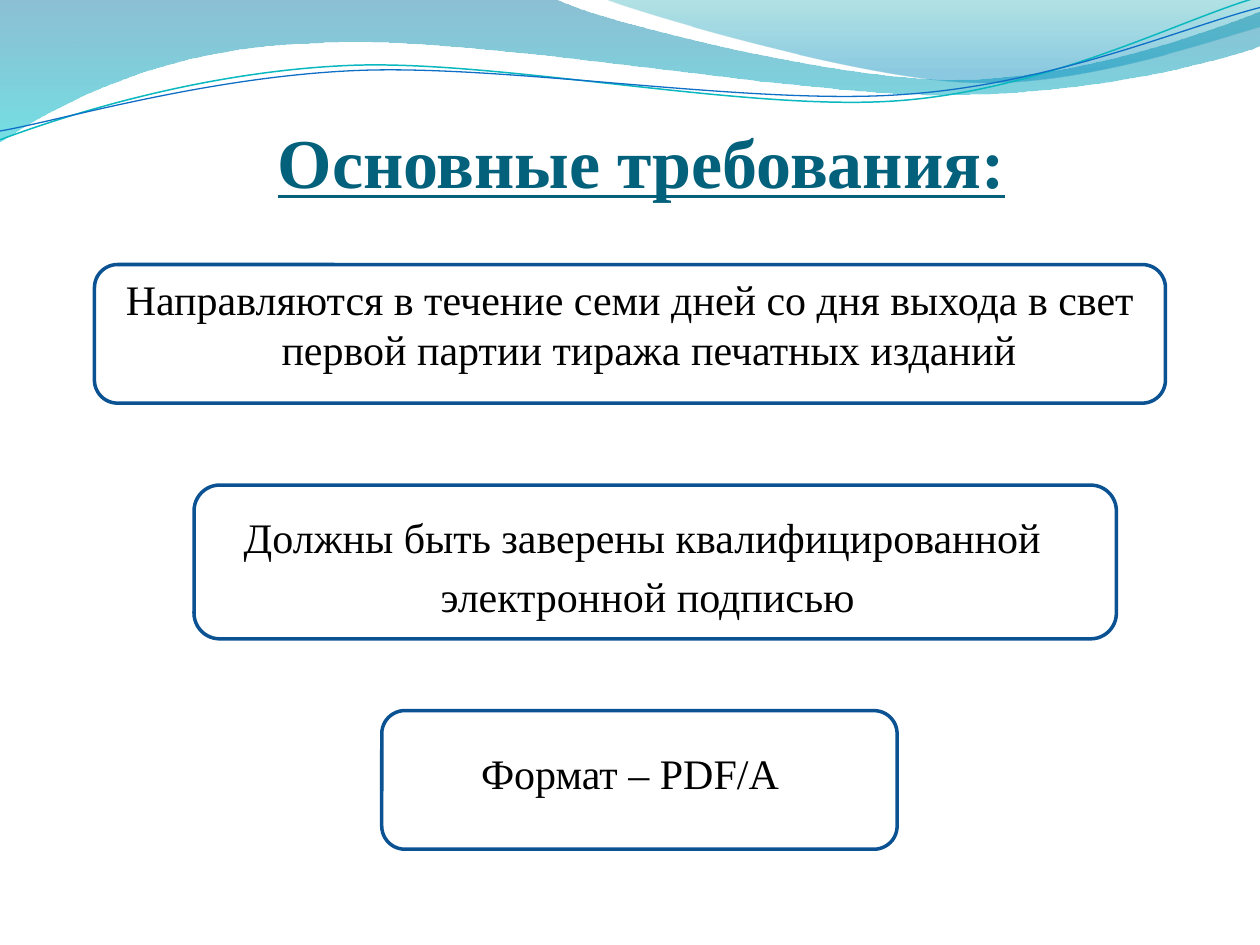
"""Build a slide listing the main requirements under a wave decoration."""
from dataclasses import dataclass

import pptx
import pptx.enum.shapes
import pptx.enum.text
import pptx.oxml.ns
import pptx.shapes.autoshape
import pptx.slide
import pptx.text.text
from lxml import etree
from pptx.dml.color import RGBColor
from pptx.util import Inches, Pt

FONT = "Times New Roman"
TITLE_COLOR = RGBColor(0x04, 0x61, 0x7B)
TEXT_COLOR = RGBColor(0x00, 0x00, 0x00)
FRAME_COLOR = RGBColor(0x0B, 0x52, 0x92)
TEAL_LINE = RGBColor(0x0A, 0xB8, 0xBF)
BLUE_LINE = RGBColor(0x0F, 0x6F, 0xC6)
DEEP_BLUE = RGBColor(0x00, 0x74, 0xA1)
TURQUOISE = RGBColor(0x00, 0xC6, 0xCF)
DARK_TEAL = RGBColor(0x00, 0xA1, 0xA9)
SKY_BLUE = RGBColor(0x00, 0x8B, 0xBF)

Point = tuple[float, float]
Box = tuple[float, float, float, float]


@dataclass(frozen=True)
class GradientStop:
    position: float
    color: RGBColor
    opacity: int


@dataclass(frozen=True)
class Wave:
    start: Point
    segments: list[tuple[Point, ...]]
    stops: tuple[GradientStop, ...] = ()
    line_color: RGBColor | None = None
    line_width: float = 0


@dataclass(frozen=True)
class Requirement:
    frame: Box
    text_box: Box
    lines: tuple[str, ...]
    hanging: float = 0
    margin_top: float = 0.05


WAVES = [
    Wave((0, 0), [
        ((4.4, -0.01),),
        ((4.76, 0.17), (6.64, 0.63), (7.58, 0.63)),
        ((8.53, 0.63), (9.58, 0.26), (10, 0.09)),
        ((10.01, 0.36),),
        ((9.83, 0.44), (8.7, 0.76), (7.46, 0.75)),
        ((6.22, 0.75), (3.82, 0.28), (2.57, 0.34)),
        ((1.29, 0.36), (0.46, 0.83), (-0.01, 1.13)),
    ], stops=(GradientStop(0, DEEP_BLUE, 45), GradientStop(1, TURQUOISE, 55))),
    Wave((4.79, -0.01), [
        ((5.09, 0.11), (6.82, 0.62), (7.69, 0.65)),
        ((8.56, 0.69), (9.61, 0.32), (10, 0.21)),
        ((10, 0),),
    ], stops=(GradientStop(0, DARK_TEAL, 30), GradientStop(0.8, SKY_BLUE, 45))),
    Wave((0, 1.11), [
        ((0.48, 0.93), (1.58, 0.57), (2.77, 0.52)),
        ((3.95, 0.47), (5.93, 0.89), (7.13, 0.8)),
        ((8.33, 0.71), (9.38, 0.15), (9.98, -0.02)),
    ], line_color=TEAL_LINE, line_width=0.85),
    Wave((0, 1.04), [
        ((0.47, 0.96), (1.64, 0.61), (2.83, 0.56)),
        ((4.03, 0.51), (5.97, 0.84), (7.17, 0.75)),
        ((8.36, 0.67), (9.41, 0.21), (10, 0.06)),
    ], line_color=BLUE_LINE, line_width=0.75),
]

REQUIREMENTS = [
    Requirement(
        (0.75, 2.1, 8.5, 1.1), (0.5, 2.12, 9, 4.8),
        ("Направляются в течение семи дней со дня выхода в свет "
         "первой партии тиража печатных изданий",), hanging=0.3),
    Requirement(
        (1.54, 3.85, 7.32, 1.22), (0.89, 3.53, 8.5, 1.53),
        ("Должны быть заверены квалифицированной ", "электронной подписью"),
        margin_top=0.53),
    Requirement(
        (3.03, 5.64, 4.09, 1.1), (2.4, 5.88, 5.2, 1.05),
        ("Формат – PDF/A",), hanging=0.3),
]


def bend_segments(shape: pptx.shapes.autoshape.Shape, wave: Wave) -> None:
    """Join each triple of line points into one cubic curve."""
    lines = shape.element.spPr.iter(pptx.oxml.ns.qn("a:lnTo"))
    remaining = iter(list(lines))
    for segment in wave.segments:
        first, *others = [next(remaining) for _ in segment]
        if not others:
            continue
        curve = etree.Element(pptx.oxml.ns.qn("a:cubicBezTo"))
        first.addprevious(curve)
        for line in (first, *others):
            curve.append(line[0])
            line.getparent().remove(line)


def draw_wave(slide: pptx.slide.Slide, wave: Wave) -> None:
    """Draw a gradient wave or an open wavy line."""
    points = [wave.start, *(point for segment in wave.segments for point in segment)]
    vertices = [(Inches(x), Inches(y)) for x, y in points]
    builder = slide.shapes.build_freeform(*vertices[0])
    builder.add_line_segments(vertices[1:], close=bool(wave.stops))
    shape = builder.convert_to_shape()
    bend_segments(shape, wave)
    shape.shadow.inherit = False
    if not wave.stops:
        shape.fill.background()
        shape.line.color.rgb = wave.line_color
        shape.line.width = Pt(wave.line_width)
        return
    shape.line.fill.background()
    shape.fill.gradient()
    shape.fill.gradient_angle = 270
    for stop, gradient_stop in zip(wave.stops, shape.fill.gradient_stops):
        gradient_stop.position = stop.position
        gradient_stop.color.rgb = stop.color
    colors = shape.element.spPr.iter(pptx.oxml.ns.qn("a:srgbClr"))
    for stop, color in zip(wave.stops, colors):
        alpha = etree.SubElement(color, pptx.oxml.ns.qn("a:alpha"))
        alpha.set("val", str(stop.opacity * 1000))


def add_run(paragraph: pptx.text.text._Paragraph, text: str, size: float,
            color: RGBColor) -> pptx.text.text._Run:
    """Add a formatted run to a centred paragraph."""
    paragraph.alignment = pptx.enum.text.PP_ALIGN.CENTER
    run = paragraph.add_run()
    run.text = text
    run.font.name = FONT
    run.font.size = Pt(size)
    run.font.color.rgb = color
    return run


def draw_title(slide: pptx.slide.Slide, text: str) -> None:
    """Place and format the slide title."""
    title = slide.shapes.title
    title.left, title.top, title.width, title.height = map(Inches, (0.59, 0.36, 9, 1.25))
    frame = title.text_frame
    frame.vertical_anchor = pptx.enum.text.MSO_ANCHOR.BOTTOM
    frame.margin_left = frame.margin_right = frame.margin_bottom = 0
    run = add_run(frame.paragraphs[0], text, 40, TITLE_COLOR)
    run.font.bold = True
    run.font.underline = True


def draw_requirement(slide: pptx.slide.Slide, requirement: Requirement) -> None:
    """Draw a rounded frame and its text."""
    shape = slide.shapes.add_shape(
        pptx.enum.shapes.MSO_SHAPE.ROUNDED_RECTANGLE, *map(Inches, requirement.frame))
    shape.shadow.inherit = False
    shape.fill.background()
    shape.line.color.rgb = FRAME_COLOR
    shape.line.width = Pt(2)
    frame = slide.shapes.add_textbox(*map(Inches, requirement.text_box)).text_frame
    frame.word_wrap = True
    frame.margin_top = Inches(requirement.margin_top)
    for index, line in enumerate(requirement.lines):
        paragraph = frame.add_paragraph() if index else frame.paragraphs[0]
        paragraph.space_before = Pt(4.8 if index else 0)
        if requirement.hanging:
            properties = paragraph._p.get_or_add_pPr()
            properties.set("marL", str(Inches(requirement.hanging)))
            properties.set("indent", str(-Inches(requirement.hanging)))
        add_run(paragraph, line, 24, TEXT_COLOR)


def main() -> None:
    """Build and save the presentation."""
    presentation = pptx.Presentation()
    presentation.slide_width, presentation.slide_height = Inches(10), Inches(7.5)
    slide = presentation.slides.add_slide(presentation.slide_layouts[5])
    for wave in WAVES:
        draw_wave(slide, wave)
    draw_title(slide, "Основные требования:")
    for requirement in REQUIREMENTS:
        draw_requirement(slide, requirement)
    presentation.save("out.pptx")


if __name__ == "__main__":
    main()
